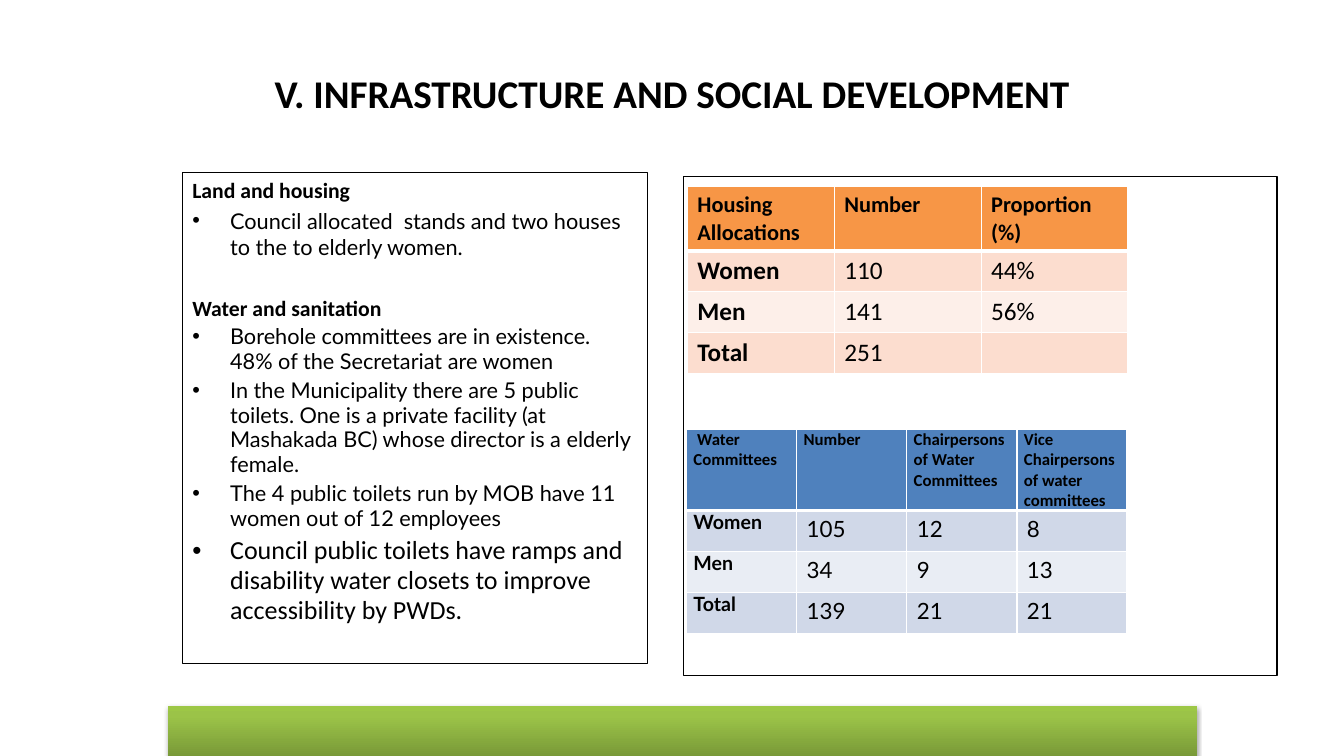
from dataclasses import dataclass

import pptx
import pptx.dml.color
import pptx.enum.shapes
import pptx.enum.text
import pptx.oxml
import pptx.oxml.ns
import pptx.slide
import pptx.text.text
import pptx.util
from copy import deepcopy
from lxml import etree

Pt = pptx.util.Pt
qn = pptx.oxml.ns.qn


@dataclass(frozen=True)
class Theme:
    ink: str = "000000"
    white: str = "FFFFFF"
    orange: str = "F79646"
    peach: tuple[str, str] = ("FCDDCF", "FDEFE9")
    blue: str = "4F81BD"
    mist: tuple[str, str] = ("D0D8E8", "E9EDF4")
    greens: tuple[tuple[float, str], ...] = ((0, "779737"), (0.8, "9BC348"), (1, "9DC746"))
    heading_font: str = "Calibri"
    body_font: str = "Lato"
    title_size: float = 28
    body_size: float = 15.5
    closing_size: float = 18.6


THEME = Theme()


@dataclass(frozen=True)
class Box:
    left: float
    top: float
    width: float
    height: float

    def lengths(self) -> tuple[pptx.util.Length, ...]:
        return tuple(Pt(value) for value in (self.left, self.top, self.width, self.height))


@dataclass(frozen=True)
class Style:
    size: float
    font: str = THEME.heading_font
    bold: bool = False


@dataclass(frozen=True)
class Item:
    text: str
    style: Style
    before: float = 3
    bullet: bool = False
    spacing: float = 1


@dataclass(frozen=True)
class Grid:
    box: Box
    header_height: float
    row_height: float
    header_fill: str
    bands: tuple[str, str]
    header: Style
    label: Style
    value: Style
    tight: bool
    rows: tuple[tuple[str, ...], ...]


HEADING = Style(THEME.body_size, bold=True)
BODY = Style(THEME.body_size, THEME.body_font)
CLOSING = Style(THEME.closing_size)

NOTES = (
    Item("Land and housing", HEADING, before=0),
    Item("Council allocated  stands and two houses to the to elderly women.", BODY, bullet=True),
    Item("Water and sanitation", HEADING, before=25),
    Item("Borehole committees are in existence. 48% of the Secretariat are women",
         BODY, bullet=True, spacing=0.95),
    Item("In the Municipality there are 5 public toilets. One is a private facility "
         "(at Mashakada BC) whose director is a elderly female.", BODY, bullet=True, spacing=0.95),
    Item("The 4 public toilets run by MOB have 11 women out of 12 employees",
         BODY, bullet=True, spacing=0.95),
    Item("Council public toilets have ramps and disability water closets to improve "
         "accessibility by PWDs.", CLOSING, before=3.7, bullet=True, spacing=0.95),
)

COMMITTEES = Grid(
    Box(490.3, 306.7, 314.8, 145.6), 58, 29.2, THEME.blue, THEME.mist,
    Style(12, bold=True), Style(14, THEME.body_font, True), Style(16, THEME.body_font), True,
    ((" Water Committees", "Number", "Chairpersons of Water Committees",
      "Vice Chairpersons of water committees"),
     ("Women", "105", "12", "8"),
     ("Men", "34", "9", "13"),
     ("Total", "139", "21", "21")))

HOUSING = Grid(
    Box(491, 133.2, 314.8, 133.6), 46, 29.2, THEME.orange, THEME.peach,
    Style(16, bold=True), Style(18, bold=True), Style(18), False,
    (("Housing Allocations", "Number", "Proportion (%)"),
     ("Women", "110", "44%"),
     ("Men", "141", "56%"),
     ("Total", "251", "")))


def colour(code: str) -> pptx.dml.color.RGBColor:
    return pptx.dml.color.RGBColor.from_string(code)


def add_span(para: pptx.text.text._Paragraph, text: str, style: Style) -> None:
    span = para.add_run()
    span.text = text
    span.font.name = style.font
    span.font.size = Pt(style.size)
    span.font.bold = style.bold
    span.font.color.rgb = colour(THEME.ink)


def add_title(page: pptx.slide.Slide, text: str) -> None:
    frame = page.shapes.add_textbox(*Box(48, 21.6, 864, 90).lengths()).text_frame
    frame.word_wrap = True
    frame.vertical_anchor = pptx.enum.text.MSO_ANCHOR.MIDDLE
    para = frame.paragraphs[0]
    para.alignment = pptx.enum.text.PP_ALIGN.CENTER
    add_span(para, text, Style(THEME.title_size, bold=True))


def add_panel(page: pptx.slide.Slide, box: Box, items: tuple[Item, ...] = ()) -> None:
    panel = page.shapes.add_textbox(*box.lengths())
    panel.line.color.rgb = colour(THEME.ink)
    panel.line.width = Pt(0.75)
    frame = panel.text_frame
    frame.word_wrap = True
    for index, item in enumerate(items):
        para = frame.add_paragraph() if index else frame.paragraphs[0]
        para.space_before = Pt(item.before)
        para.line_spacing = item.spacing
        if item.bullet:
            properties = para._p.get_or_add_pPr()
            properties.set("marL", str(Pt(27)))
            properties.set("indent", str(-Pt(27)))
            etree.SubElement(properties, qn("a:buFont"), typeface="Arial")
            etree.SubElement(properties, qn("a:buChar"), char="•")
        add_span(para, item.text, item.style)


def add_footer(page: pptx.slide.Slide, box: Box) -> None:
    bar = page.shapes.add_shape(pptx.enum.shapes.MSO_SHAPE.RECTANGLE, *box.lengths())
    bar.line.fill.background()
    bar.fill.gradient()
    bar.fill.gradient_angle = 90
    stops = bar._element.spPr.find(qn("a:gradFill")).find(qn("a:gsLst"))
    stops.append(deepcopy(stops[-1]))
    for stop, (position, code) in zip(bar.fill.gradient_stops, THEME.greens):
        stop.position = position
        stop.color.rgb = colour(code)
    bar.shadow.inherit = False
    effects = bar._element.spPr.find(qn("a:effectLst"))
    shadow = etree.SubElement(effects, qn("a:outerShdw"), blurRad=str(Pt(3.1)),
                              dist=str(Pt(1.8)), dir="5400000", rotWithShape="0")
    shade = etree.SubElement(shadow, qn("a:srgbClr"), val=THEME.ink)
    etree.SubElement(shade, qn("a:alpha"), val="35000")


def add_borders(cell: pptx.table._Cell, row: int) -> None:
    widths = {"L": 1, "R": 1, "T": 3 if row == 1 else 1, "B": 3 if row == 0 else 1}
    for side, width in widths.items():
        line = etree.SubElement(cell._tc.get_or_add_tcPr(), qn(f"a:ln{side}"), w=str(Pt(width)))
        fill = etree.SubElement(line, qn("a:solidFill"))
        etree.SubElement(fill, qn("a:srgbClr"), val=THEME.white)


def add_grid(page: pptx.slide.Slide, grid: Grid) -> None:
    columns = len(grid.rows[0])
    table = page.shapes.add_table(len(grid.rows), columns, *grid.box.lengths()).table
    for column in table.columns:
        column.width = Pt(grid.box.width / columns)
    for row, texts in enumerate(grid.rows):
        table.rows[row].height = Pt(grid.row_height if row else grid.header_height)
        for column, text in enumerate(texts):
            cell = table.cell(row, column)
            add_borders(cell, row)
            cell.fill.solid()
            cell.fill.fore_color.rgb = colour(grid.bands[(row - 1) % 2] if row else grid.header_fill)
            para = cell.text_frame.paragraphs[0]
            if grid.tight and (row == 0 or column == 0):
                cell.margin_left = cell.margin_right = Pt(5)
                cell.margin_top = cell.margin_bottom = Pt(0)
                para.space_after = Pt(6)
            style = grid.header if row == 0 else grid.label if column == 0 else grid.value
            if text:
                add_span(para, text, style)


def main() -> None:
    deck = pptx.Presentation()
    deck.slide_width, deck.slide_height = Pt(960), Pt(540)
    page = deck.slides.add_slide(deck.slide_layouts[6])
    add_title(page, "V. INFRASTRUCTURE AND SOCIAL DEVELOPMENT")
    add_panel(page, Box(130.3, 123.1, 331.9, 350.6), NOTES)
    add_panel(page, Box(488.2, 126, 424, 356.4))
    add_footer(page, Box(120, 504, 735, 38))
    for grid in (COMMITTEES, HOUSING):
        add_grid(page, grid)
    deck.save("out.pptx")


if __name__ == "__main__":
    main()
